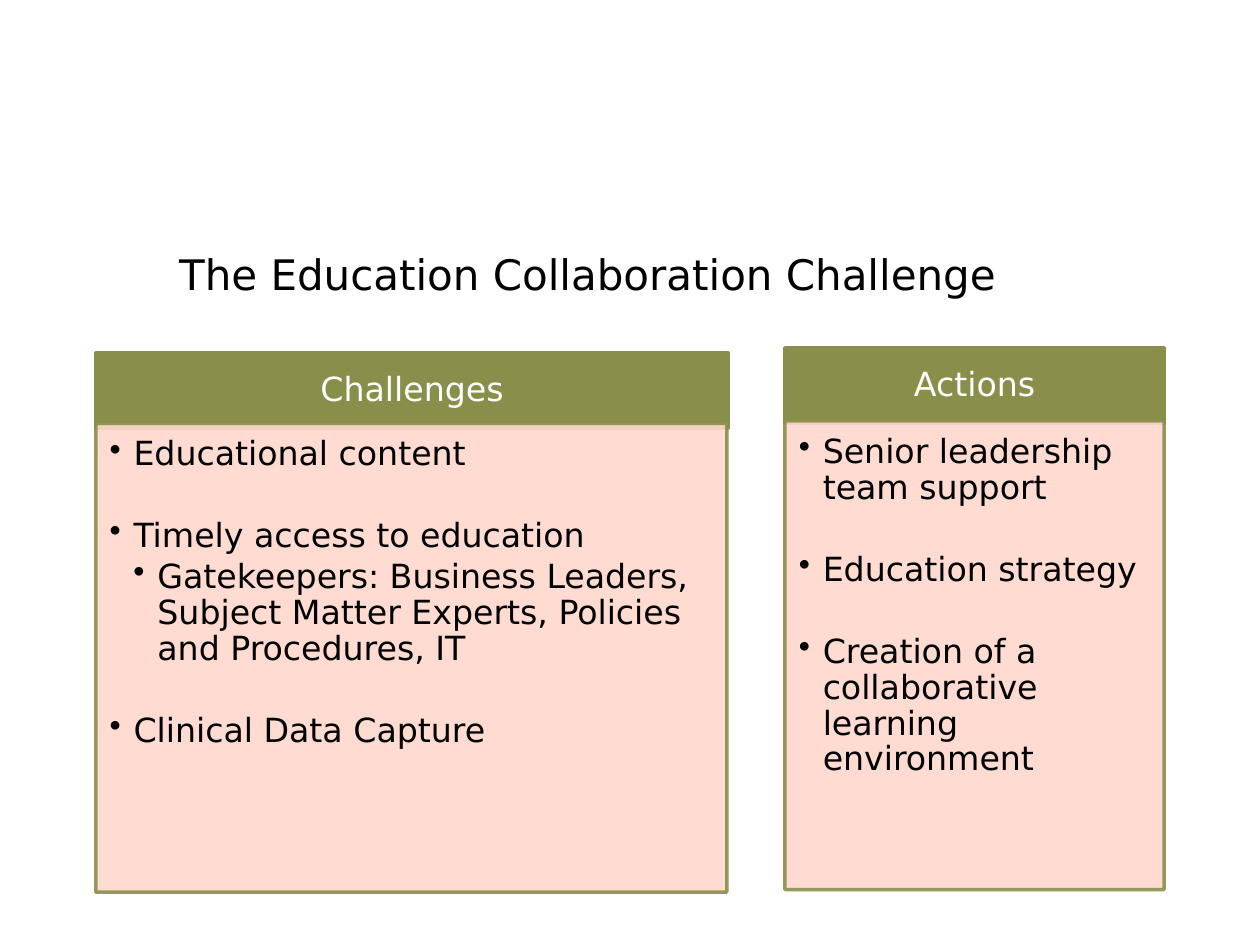
from lxml.etree import SubElement
from pptx import Presentation
from pptx.dml.color import RGBColor
from pptx.enum.shapes import MSO_SHAPE
from pptx.enum.text import MSO_ANCHOR, PP_ALIGN
from pptx.oxml.ns import qn
from pptx.util import Inches, Pt

FONT = "DejaVu Sans"
OLIVE, PINK, BLACK, WHITE = "898F4B", "FFD8CD", "000000", "FFFFFF"
TITLE = "The Education Collaboration Challenge"
HEADER_HEIGHT, BODY_HEIGHT = 0.6, 3.72
INDENT = 0.19
TIGHT, WIDE = 2.9, 26.3
PANELS = [
    {"heading": "Challenges", "left": 0.76, "width": 5.02, "header_top": 2.8,
     "body_top": 3.36, "body_width": 5.01,
     "items": [
         (1, TIGHT, "Educational content"),
         (1, WIDE, "Timely access to education"),
         (2, TIGHT, "Gatekeepers: Business Leaders, Subject Matter Experts, "
                    "Policies and Procedures, IT"),
         (1, WIDE, "Clinical Data Capture"),
     ]},
    {"heading": "Actions", "left": 6.23, "width": 3.01, "header_top": 2.76,
     "body_top": 3.34, "body_width": 3.01,
     "items": [
         (1, TIGHT, "Senior leadership team support"),
         (1, WIDE, "Education strategy"),
         (1, WIDE, "Creation of a collaborative learning environment"),
     ]},
]


def rgb(value):
    """Turn a hex string into a colour."""
    return RGBColor.from_string(value)


def style_runs(paragraph, size, color):
    """Format every run of a paragraph."""
    for run in paragraph.runs:
        run.font.name = FONT
        run.font.size = Pt(size)
        run.font.color.rgb = rgb(color)


def set_margins(frame, left, top, right, bottom):
    """Set the text insets and wrap the text."""
    frame.word_wrap = True
    frame.margin_left, frame.margin_top = Inches(left), Inches(top)
    frame.margin_right, frame.margin_bottom = Inches(right), Inches(bottom)


def add_box(slide, left, top, width, height, fill):
    """Add a rectangle with an olive outline."""
    shape = slide.shapes.add_shape(MSO_SHAPE.RECTANGLE, Inches(left), Inches(top),
                                   Inches(width), Inches(height))
    shape.shadow.inherit = False
    shape.fill.solid()
    shape.fill.fore_color.rgb = rgb(fill)
    shape.line.color.rgb = rgb(OLIVE)
    shape.line.width = Pt(2)
    return shape


def add_title(slide):
    """Place and format the title placeholder."""
    title = slide.shapes.title
    title.left, title.top = Inches(0.75), Inches(1.58)
    title.width, title.height = Inches(7.83), Inches(1.19)
    frame = title.text_frame
    frame.text = TITLE
    frame.vertical_anchor = MSO_ANCHOR.MIDDLE
    frame.paragraphs[0].alignment = PP_ALIGN.CENTER
    style_runs(frame.paragraphs[0], 24, BLACK)


def add_header(slide, panel):
    """Add the coloured heading of a panel."""
    shape = add_box(slide, panel["left"], panel["header_top"], panel["width"],
                    HEADER_HEIGHT, OLIVE)
    frame = shape.text_frame
    set_margins(frame, 0.15, 0.08, 0.15, 0.08)
    frame.vertical_anchor = MSO_ANCHOR.MIDDLE
    frame.text = panel["heading"]
    paragraph = frame.paragraphs[0]
    paragraph.alignment = PP_ALIGN.CENTER
    paragraph.line_spacing = 0.9
    style_runs(paragraph, 19, WHITE)


def add_body(slide, panel):
    """Add the translucent box with the bulleted items of a panel."""
    shape = add_box(slide, panel["left"], panel["body_top"], panel["body_width"],
                    BODY_HEIGHT, PINK)
    for color in shape._element.spPr.iter(qn("a:srgbClr")):
        SubElement(color, qn("a:alpha"), val="90000")
    frame = shape.text_frame
    set_margins(frame, 0.11, 0.11, 0.15, 0.17)
    frame.vertical_anchor = MSO_ANCHOR.TOP
    frame.text = "\n".join(text for _, _, text in panel["items"])
    for index, (level, gap, _) in enumerate(panel["items"]):
        paragraph = frame.paragraphs[index]
        properties = paragraph._p.get_or_add_pPr()
        properties.set("marL", str(Inches(INDENT * level)))
        properties.set("indent", str(-Inches(INDENT)))
        SubElement(properties, qn("a:buChar"), char="•")
        paragraph.level = level
        paragraph.alignment = PP_ALIGN.LEFT
        paragraph.line_spacing = 0.9
        paragraph.space_before = Pt(gap if index else 0)
        style_runs(paragraph, 19, BLACK)


def main():
    """Build and save the slide."""
    presentation = Presentation()
    presentation.slide_width, presentation.slide_height = Inches(10), Inches(7.5)
    slide = presentation.slides.add_slide(presentation.slide_layouts[5])
    add_title(slide)
    for panel in PANELS:
        add_header(slide, panel)
        add_body(slide, panel)
    presentation.save("out.pptx")


if __name__ == "__main__":
    main()
